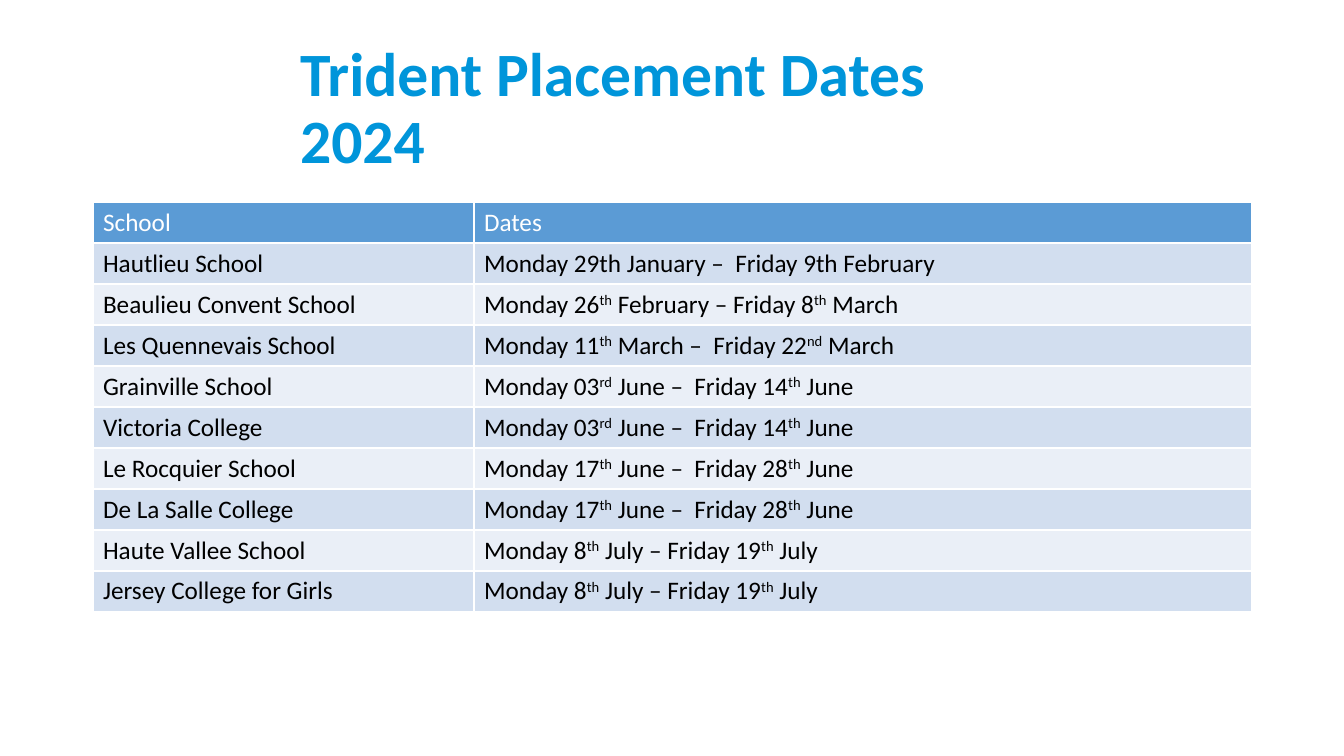
from dataclasses import dataclass

from lxml import etree
from pptx import Presentation
from pptx.dml.color import RGBColor
from pptx.enum.text import MSO_ANCHOR, MSO_AUTO_SIZE, PP_ALIGN
from pptx.oxml.ns import qn
from pptx.util import Pt

LEFT = PP_ALIGN.LEFT
MIDDLE = MSO_ANCHOR.MIDDLE
NO_FIT = MSO_AUTO_SIZE.NONE

TITLE = "Trident Placement Dates 2024"
# Text between carets is set as superscript.
PLACEMENTS = [
    ("School", "Dates"),
    ("Hautlieu School", "Monday 29th January –  Friday 9th February"),
    ("Beaulieu Convent School", "Monday 26^th^ February – Friday 8^th^ March"),
    ("Les Quennevais School", "Monday 11^th^ March –  Friday 22^nd^ March"),
    ("Grainville School", "Monday 03^rd^ June –  Friday 14^th^ June"),
    ("Victoria College", "Monday 03^rd^ June –  Friday 14^th^ June"),
    ("Le Rocquier School", "Monday 17^th^ June –  Friday 28^th^ June"),
    ("De La Salle College", "Monday 17^th^ June –  Friday 28^th^ June"),
    ("Haute Vallee School", "Monday 8^th^ July – Friday 19^th^ July"),
    ("Jersey College for Girls", "Monday 8^th^ July – Friday 19^th^ July"),
]

PAGE_SIZE = (1344, 756)
TITLE_BOX = (290, 37, 763, 146)
TABLE_CORNER = (93, 202)
COLUMN_WIDTHS = (381, 778)
ROW_HEIGHT = 41
TITLE_ONLY = 5


@dataclass(frozen=True)
class Theme:
    font: str = "Calibri"
    title_size: int = 44
    table_size: int = 18
    title: str = "0095DA"
    header_fill: str = "5B9BD5"
    header_text: str = "FFFFFF"
    body_text: str = "000000"
    bands: tuple = ("D2DEEF", "EAEFF7")
    border: str = "FFFFFF"
    border_width: int = 1


THEME = Theme()


def px(length):
    return round(length * 914400 / 100.8)


def style_span(span, size, color, bold=False):
    span.font.name = THEME.font
    span.font.size = Pt(size)
    span.font.bold = bold
    span.font.color.rgb = RGBColor.from_string(color)


def add_borders(cell):
    properties = cell._tc.get_or_add_tcPr()
    for side in ("lnL", "lnR", "lnT", "lnB"):
        line = etree.SubElement(properties, qn(f"a:{side}"), w=str(Pt(THEME.border_width)))
        fill = etree.SubElement(line, qn("a:solidFill"))
        etree.SubElement(fill, qn("a:srgbClr"), val=THEME.border)


def fill_cell(cell, text, fill, color):
    add_borders(cell)
    cell.fill.solid()
    cell.fill.fore_color.rgb = RGBColor.from_string(fill)
    para = cell.text_frame.paragraphs[0]
    for index, part in enumerate(text.split("^")):
        span = para.add_run()
        span.text = part
        style_span(span, THEME.table_size, color)
        if index % 2:
            span.font._element.set("baseline", "30000")


def add_title(page):
    title = page.shapes.title
    title.left, title.top, title.width, title.height = map(px, TITLE_BOX)
    frame = title.text_frame
    frame.text = TITLE
    frame.word_wrap = True
    frame.auto_size = NO_FIT
    frame.vertical_anchor = MIDDLE
    para = frame.paragraphs[0]
    para.alignment = LEFT
    para.line_spacing = 0.9
    style_span(para.runs[0], THEME.title_size, THEME.title, bold=True)


def add_placements(page):
    size = (sum(COLUMN_WIDTHS), ROW_HEIGHT * len(PLACEMENTS))
    table = page.shapes.add_table(
        len(PLACEMENTS), len(COLUMN_WIDTHS), *map(px, TABLE_CORNER + size)
    ).table
    for column, width in zip(table.columns, COLUMN_WIDTHS):
        column.width = px(width)
    for index, (row, texts) in enumerate(zip(table.rows, PLACEMENTS)):
        row.height = px(ROW_HEIGHT)
        if index == 0:
            fill, color = THEME.header_fill, THEME.header_text
        else:
            fill, color = THEME.bands[(index - 1) % 2], THEME.body_text
        for cell, text in zip(row.cells, texts):
            fill_cell(cell, text, fill, color)


def main():
    deck = Presentation()
    deck.slide_width, deck.slide_height = map(px, PAGE_SIZE)
    page = deck.slides.add_slide(deck.slide_layouts[TITLE_ONLY])
    add_title(page)
    add_placements(page)
    deck.save("out.pptx")


if __name__ == "__main__":
    main()
